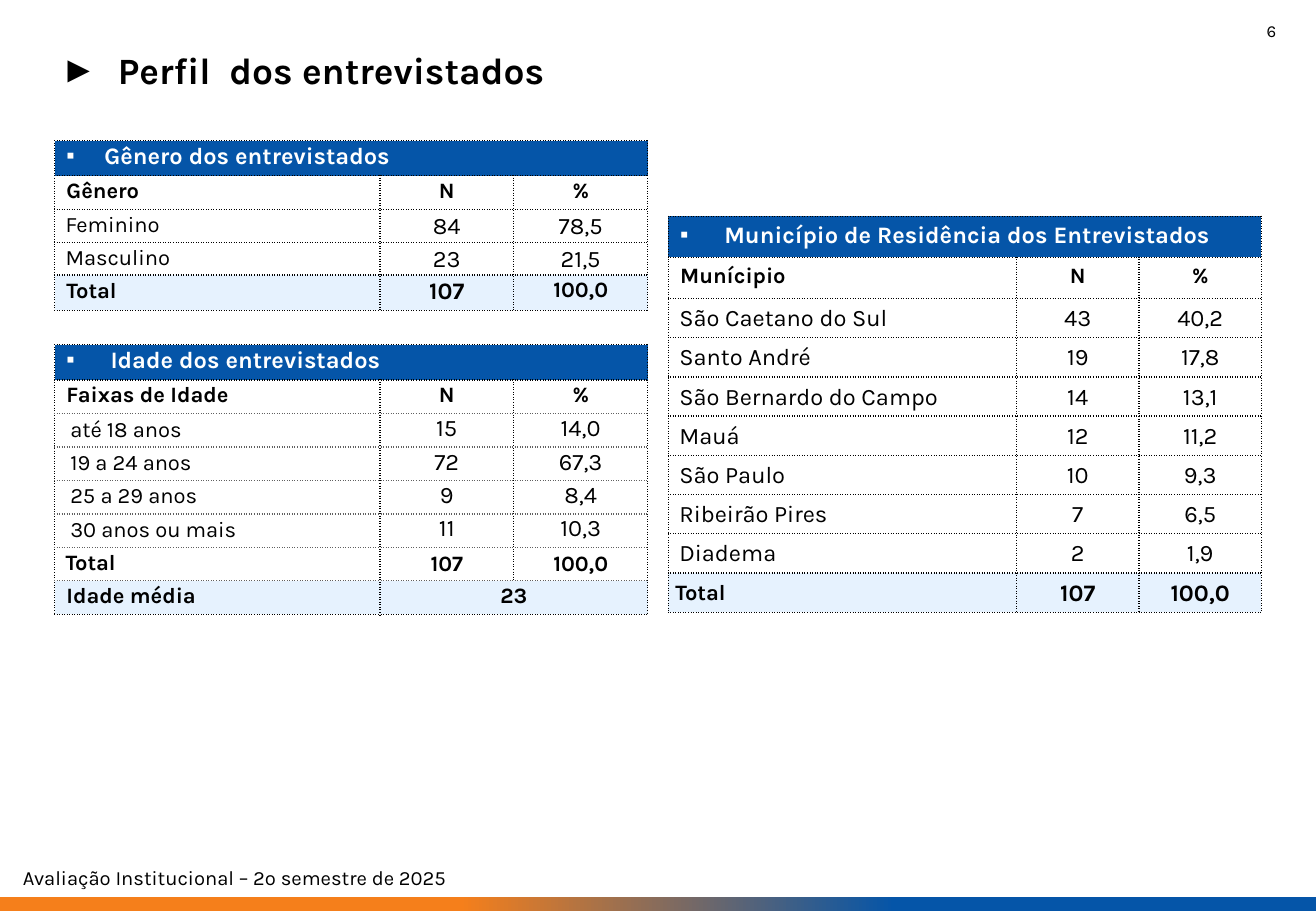
from lxml import etree
from pptx import Presentation
from pptx.dml.color import RGBColor
from pptx.enum.shapes import MSO_SHAPE as Shape
from pptx.enum.text import MSO_ANCHOR as Anchor, MSO_AUTO_SIZE as Fit, PP_ALIGN as Align
from pptx.oxml import parse_xml
from pptx.oxml.ns import nsdecls, qn
from pptx.util import Cm, Pt

HUES = {"black": "000000", "white": "FFFFFF", "gray": "606060",
        "blue": "0555A8", "pale": "E6F2FE", "orange": "F57F1B"}
WIDE = (0.25, 0.13, 0.25, 0.13)
TIGHT = (0.03, 0.03, 0.03, 0)


def label(size=13, bold=False, left=0.23, lead=0.8, **more):
    return dict(size=size, bold=bold, pad=(left,) + TIGHT[1:], lead=lead, **more)


def value(size=14, bold=False, **more):
    return dict(size=size, bold=bold, align=Align.CENTER, pad=TIGHT, **more)


def wide(**more):
    return dict(size=13, bold=True, pad=WIDE, lead=0.8) | more


MID = dict(align=Align.CENTER)
TOP = dict(anchor=Anchor.TOP)
PALE = dict(fill="pale")
NAMES = [wide(), wide(**MID), wide(**MID)]
SEX = [label(), value(), value()]
SEX_SUM = [wide(**PALE), wide(size=14, **MID, **TOP, **PALE), wide(**MID, **TOP, **PALE)]
AGE = [label(left=0.33), value(**TOP), value(**TOP)]
AGE_SUM = [label(bold=True), value(13, True), value(13, True)]
MEAN = [wide(**PALE), wide(**MID, **TOP, **PALE)]
CITY = [label(14, lead=None), value(), value()]
CITY_SUM = [label(bold=True, left=0.15, lead=None, **PALE),
            value(bold=True, **PALE), value(bold=True, **PALE)]


def head(hang):
    return [wide(size=14, hue="white", fill="blue", mark="▪", hang=hang)]


def rgb(hue):
    return RGBColor.from_string(HUES[hue])


def bullet(para, mark, left, hang, hue):
    props = para._p.get_or_add_pPr()
    props.set("marL", str(Cm(left)))
    props.set("indent", str(-Cm(hang)))
    color = etree.SubElement(props, qn("a:buClr"))
    etree.SubElement(color, qn("a:srgbClr"), val=HUES[hue])
    etree.SubElement(props, qn("a:buFont"), typeface="Arial")
    etree.SubElement(props, qn("a:buChar"), char=mark)


def write(para, text, size, bold=False, hue="black", align=Align.LEFT):
    para.alignment = align
    run = para.add_run()
    run.text = text
    font = run.font
    font.name, font.size, font.bold = "Karla", Pt(size), bold
    font.color.rgb = rgb(hue)


def fill_cell(cell, text, size, bold, pad, lead=None, hue="black", fill=None,
              align=Align.LEFT, anchor=Anchor.MIDDLE, mark=None, hang=0):
    cell.margin_left, cell.margin_top, cell.margin_right, cell.margin_bottom = map(Cm, pad)
    cell.vertical_anchor = anchor
    if fill:
        cell.fill.solid()
        cell.fill.fore_color.rgb = rgb(fill)
    else:
        cell.fill.background()
    para = cell.text_frame.paragraphs[0]
    if lead:
        para.line_spacing = lead
    if mark:
        bullet(para, mark, hang, hang, hue)
    write(para, text, size, bold, hue, align)


def edge(cell, sides):
    """Draw dotted borders; sides lists (tag, points, hue) in L, R, T, B order."""
    props = cell._tc.get_or_add_tcPr()
    for spot, (tag, width, hue) in enumerate(sides):
        props.insert(spot, parse_xml(
            f'<a:{tag} {nsdecls("a")} w="{Pt(width)}"><a:solidFill>'
            f'<a:srgbClr val="{HUES[hue]}"/></a:solidFill><a:prstDash val="dot"/></a:{tag}>'))


def add_grid(slide, left, top, cols, highs, rows, rule="black"):
    """Add a table from (styles, texts) rows; the last text spans what is left."""
    frame = slide.shapes.add_table(len(rows), len(cols), Cm(left), Cm(top),
                                   Cm(sum(cols)), Cm(sum(highs)))
    table = frame.table
    table.first_row = table.horz_banding = False
    for col, width in zip(table.columns, cols):
        col.width = Cm(width)
    for row, high in zip(table.rows, highs):
        row.height = Cm(high)
    last, end = len(rows) - 1, len(cols) - 1
    for r, (styles, texts) in enumerate(rows):
        for c, (style, text) in enumerate(zip(styles, texts)):
            cell = table.cell(r, c)
            stop = end if c == len(texts) - 1 else c
            if stop > c:
                cell.merge(table.cell(r, stop))
            fill_cell(cell, text, **style)
            edge(cell, [("lnL", 1 if c else 0.75, "black"),
                        ("lnR", 1 if stop < end else 0.75, "black"),
                        ("lnT", 1 if r else 0.75, rule if r > 1 else "black"),
                        ("lnB", 1 if r < last else 0.75,
                         rule if 0 < r < last else "black")])


def add_text(slide, text, size, left, top, width, high, align=Align.LEFT):
    frame = slide.shapes.add_textbox(Cm(left), Cm(top), Cm(width), Cm(high)).text_frame
    frame.word_wrap = True
    write(frame.paragraphs[0], text, size, align=align)


def add_title(slide, text):
    title = slide.shapes.title
    title.left, title.top, title.width, title.height = map(Cm, (0.15, 0.81, 15.4, 1.3))
    frame = title.text_frame
    frame.auto_size, frame.vertical_anchor = Fit.NONE, Anchor.MIDDLE
    para = frame.paragraphs[0]
    bullet(para, "►", 2.06, 1.2, "black")
    write(para, text, 22, True)


def add_band(slide, width):
    band = slide.shapes.add_shape(Shape.RECTANGLE, 0, Cm(18.75), width, Cm(0.3))
    band.shadow.inherit = False
    band.line.fill.background()
    band.fill.gradient()
    band.fill.gradient_angle = 0
    for stop, place, hue in zip(band.fill.gradient_stops, (0.35, 0.68), ("orange", "blue")):
        stop.position = place
        stop.color.rgb = rgb(hue)


def main():
    deck = Presentation()
    deck.slide_width, deck.slide_height = Cm(27.51), Cm(19.05)
    slide = deck.slides.add_slide(deck.slide_layouts[5])
    add_band(slide, deck.slide_width)
    add_text(slide, "Avaliação Institucional – 2º semestre de 2025", 12, 0.23, 17.96, 27.05, 0.76)
    add_title(slide, "Perfil  dos entrevistados")
    add_text(slide, "6", 10, 21.11, 0.3, 5.82, 1.02, Align.RIGHT)

    thirds = (6.8, 2.8, 2.8)
    add_grid(slide, 1.14, 2.94, thirds, [0.72] + [0.69] * 3 + [0.72], [
        (head(0.79), ["Gênero dos entrevistados"]),
        (NAMES, ["Gênero", "N", "%"]),
        (SEX, ["Feminino", "84", "78,5"]),
        (SEX, ["Masculino", "23", "21,5"]),
        (SEX_SUM, ["Total", "107", "100,0"]),
    ])
    add_grid(slide, 1.14, 7.21, thirds, [0.72] + [0.7] * 7, [
        (head(0.92), ["Idade dos entrevistados"]),
        (NAMES, ["Faixas de Idade", "N", "%"]),
        (AGE, ["até 18 anos", "15", "14,0"]),
        (AGE, ["19 a 24 anos", "72", "67,3"]),
        (AGE, ["25 a 29 anos", "9", "8,4"]),
        (AGE, ["30 anos ou mais", "11", "10,3"]),
        (AGE_SUM, ["Total", "107", "100,0"]),
        (MEAN, ["Idade média", "23"]),
    ], rule="gray")
    add_grid(slide, 13.97, 4.52, (7.28, 2.56, 2.56), [0.86] * 2 + [0.82] * 8, [
        (head(0.92), ["Município de Residência dos Entrevistados"]),
        (NAMES, ["Munícipio", "N", "%"]),
        (CITY, ["São Caetano do Sul", "43", "40,2"]),
        (CITY, ["Santo André", "19", "17,8"]),
        (CITY, ["São Bernardo do Campo", "14", "13,1"]),
        (CITY, ["Mauá", "12", "11,2"]),
        (CITY, ["São Paulo", "10", "9,3"]),
        (CITY, ["Ribeirão Pires", "7", "6,5"]),
        (CITY, ["Diadema", "2", "1,9"]),
        (CITY_SUM, ["Total", "107", "100,0"]),
    ])
    deck.save("out.pptx")


if __name__ == "__main__":
    main()
